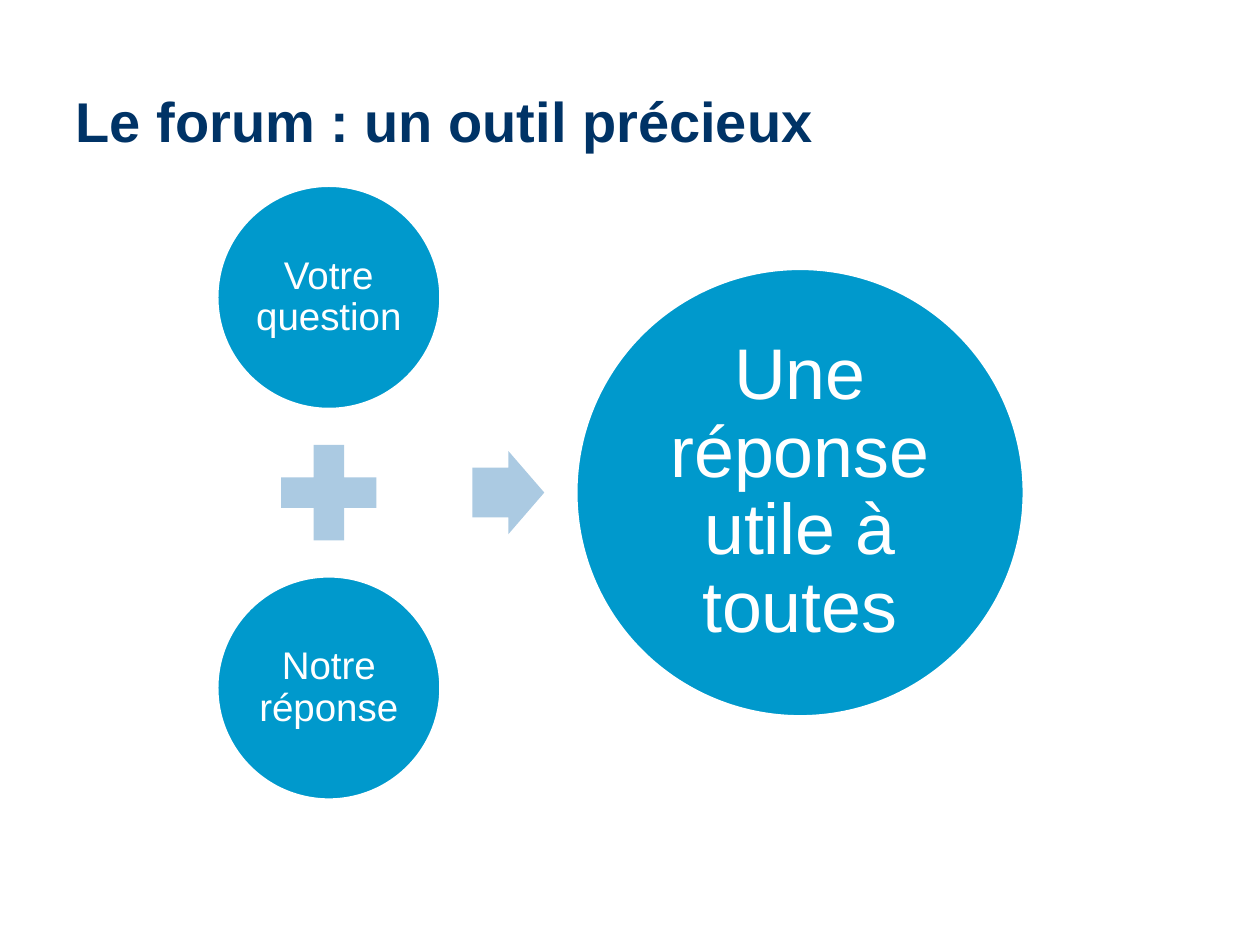
from pptx import Presentation
from pptx.dml.color import RGBColor
from pptx.enum.shapes import MSO_SHAPE
from pptx.enum.text import MSO_ANCHOR, PP_ALIGN
from pptx.util import Inches, Pt

OVAL, PLUS, ARROW = MSO_SHAPE.OVAL, MSO_SHAPE.MATH_PLUS, MSO_SHAPE.RIGHT_ARROW
MIDDLE = MSO_ANCHOR.MIDDLE
LEFT, CENTER = PP_ALIGN.LEFT, PP_ALIGN.CENTER
NAVY, BLUE, PALE, WHITE = "003366", "0099CC", "ABCAE2", "FFFFFF"


def color(code):
    return RGBColor.from_string(code)


def write(shape, text, size, ink=WHITE, bold=False, align=CENTER, inset=0.03, spacing=0.9):
    frame = shape.text_frame
    frame.word_wrap = True
    frame.vertical_anchor = MIDDLE
    frame.margin_left = frame.margin_right = Inches(inset)
    frame.margin_top = frame.margin_bottom = Inches(inset)
    frame.text = text
    para = frame.paragraphs[0]
    para.alignment = align
    para.line_spacing = spacing
    font = para.runs[0].font
    font.name, font.size, font.bold = "Arial", Pt(size), bold
    font.color.rgb = color(ink)


def add_sign(group, kind, left, top, width, height, fill=PALE):
    shape = group.shapes.add_shape(
        kind, Inches(left), Inches(top), Inches(width), Inches(height))
    shape.shadow.inherit = False
    shape.fill.solid()
    shape.fill.fore_color.rgb = color(fill)
    shape.line.fill.background()
    return shape


def add_circle(group, left, top, side, text, size, inset=0.03):
    circle = add_sign(group, OVAL, left, top, side, side, BLUE)
    circle.line.color.rgb = color(WHITE)
    circle.line.width = Pt(2)
    write(circle, text, size, inset=inset)


def add_title(slide, left, top, width, height):
    title = slide.shapes.title
    title.left, title.top = Inches(left), Inches(top)
    title.width, title.height = Inches(width), Inches(height)
    write(title, "Le forum : un outil précieux", 32, NAVY, True, LEFT, 0.1, 1)


def add_sum(slide, left, top, width, height):
    """Two stacked circles joined by a plus, with an arrow to their result."""
    group = slide.shapes.add_group_shape()
    small, plus, large = 1.78, 1.03, 3.56
    arrow_w, arrow_h = 0.57, 0.66
    middle = top + height / 2
    result = left + width - large

    add_circle(group, left, top, small, "Votre question", 22)
    add_sign(group, PLUS, left + (small - plus) / 2, middle - plus / 2, plus, plus)
    add_circle(group, left, top + height - small, small, "Notre réponse", 22)

    space = result - left - small
    arrow = add_sign(group, ARROW, left + small + (space - arrow_w) / 2,
                     middle - arrow_h / 2, arrow_w, arrow_h)
    arrow.adjustments[0], arrow.adjustments[1] = 0.6, 0.5
    add_circle(group, result, middle - large / 2, large,
               "Une réponse utile à toutes", 41, inset=0.06)


def main():
    deck = Presentation()
    deck.slide_width, deck.slide_height = Inches(10), Inches(7.5)
    slide = deck.slides.add_slide(deck.slide_layouts[5])
    add_title(slide, 0.5, 0.6, 9, 0.71)
    add_sum(slide, 1.72, 1.47, 6.41, 4.88)
    deck.save("out.pptx")


if __name__ == "__main__":
    main()
